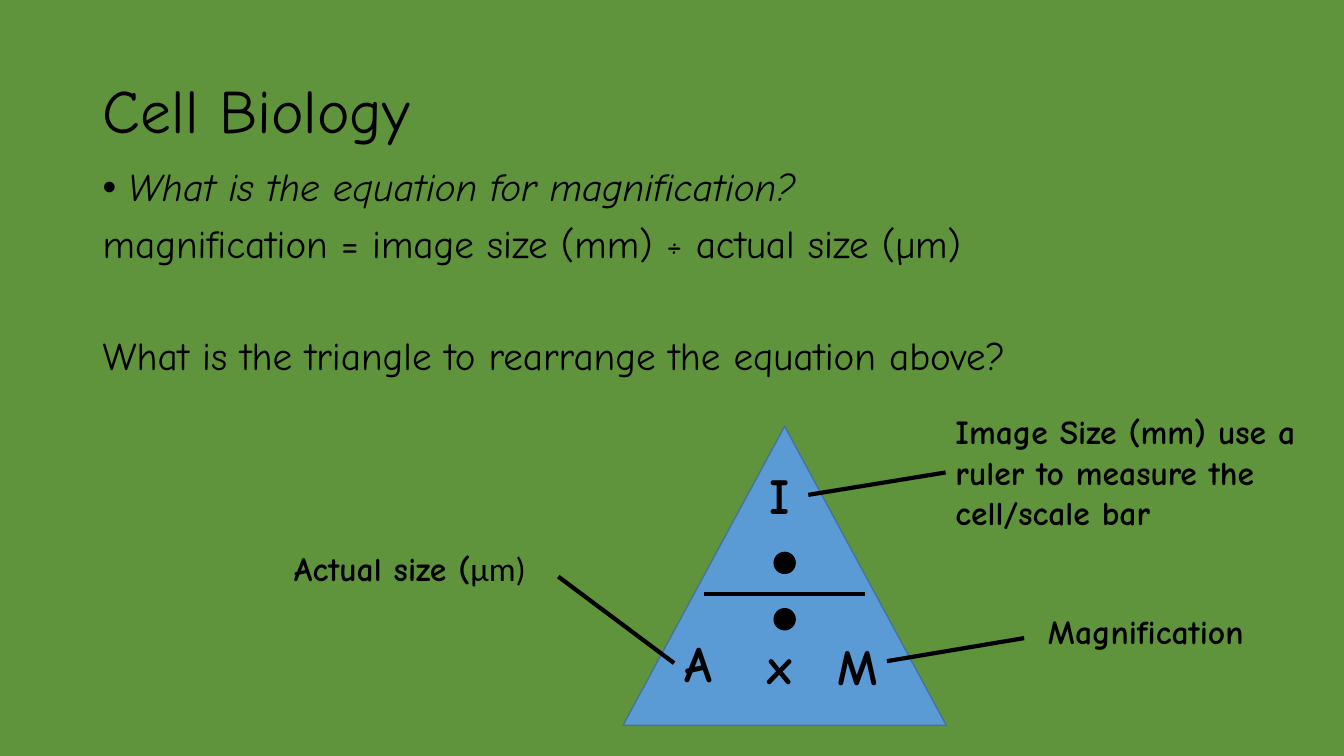
from pptx import Presentation
from pptx.util import Cm, Pt
from pptx.dml.color import RGBColor
from pptx.enum import shapes, text
from pptx.oxml.ns import qn
from lxml import etree

GREEN = RGBColor(0x60, 0x94, 0x3C)
BLUE = RGBColor(0x5B, 0x9B, 0xD5)
EDGE = RGBColor(0x43, 0x73, 0x9E)
BLACK = RGBColor(0, 0, 0)
FONT = "Comic Neue"


def add_text(parent, box, lines, size, bold=False, wrap=True):
    sp = parent.add_textbox(*[Cm(v) for v in box])
    tf = sp.text_frame
    tf.word_wrap = wrap
    tf.text = "\n".join(lines)
    for p in tf.paragraphs:
        p.font.name, p.font.size, p.font.bold = FONT, Pt(size), bold
        p.font.color.rgb = BLACK
    return sp


def add_line(parent, x1, y1, x2, y2):
    cn = parent.add_connector(shapes.MSO_CONNECTOR.STRAIGHT, Cm(x1), Cm(y1), Cm(x2), Cm(y2))
    cn.line.color.rgb = BLACK
    cn.line.width = Pt(3)
    etree.SubElement(cn._element.spPr, qn("a:effectLst"))
    return cn


prs = Presentation()
prs.slide_width, prs.slide_height = Cm(33.87), Cm(19.05)
s = prs.slides.add_slide(prs.slide_layouts[5])
s.background.fill.solid()
s.background.fill.fore_color.rgb = GREEN

# Title
title = s.shapes.title
title.left, title.top, title.width, title.height = Cm(2.34), Cm(1.02), Cm(29.21), Cm(3.68)
tf = title.text_frame
tf.text = "Cell Biology"
tf.auto_size = text.MSO_AUTO_SIZE.NONE
tf.vertical_anchor = text.MSO_ANCHOR.MIDDLE
p = tf.paragraphs[0]
p.alignment = text.PP_ALIGN.LEFT
p.line_spacing = 0.9
p.font.name, p.font.size = FONT, Pt(44)
p.font.color.rgb = BLACK

# Questions and equation
body = add_text(s.shapes, (2.34, 4.11, 29.21, 14.2), [
    "What is the equation for magnification?",
    "magnification = image size (mm) ÷ actual size (µm)",
    "What is the triangle to rearrange the equation above?",
], 28)
for p, gap in zip(body.text_frame.paragraphs, (10, 10, 50)):
    p.line_spacing = 0.9
    p.space_before = Pt(gap)
p = body.text_frame.paragraphs[0]
p.font.italic = True
pPr = p._p.get_or_add_pPr()
pPr.set("marL", str(Cm(0.635)))
pPr.set("indent", str(-Cm(0.635)))
bullet_font = etree.Element(qn("a:buFont"), typeface="Arial")
bullet = etree.Element(qn("a:buChar"), char="•")
pPr.find(qn("a:defRPr")).addprevious(bullet_font)
bullet_font.addnext(bullet)

# Formula triangle with its division sign
group = s.shapes.add_group_shape().shapes
SHAPE = shapes.MSO_SHAPE
for kind, box, fill, edge in [
    (SHAPE.ISOSCELES_TRIANGLE, (15.7, 10.74, 8.15, 7.54), BLUE, EDGE),
    (SHAPE.OVAL, (19.51, 13.92, 0.53, 0.53), BLACK, BLACK),
    (SHAPE.OVAL, (19.51, 15.34, 0.53, 0.53), BLACK, BLACK),
]:
    sp = group.add_shape(kind, *[Cm(v) for v in box])
    sp.shadow.inherit = False
    sp.fill.solid()
    sp.fill.fore_color.rgb = fill
    sp.line.color.rgb = edge
    sp.line.width = Pt(1)
add_line(group, 17.73, 14.96, 21.79, 14.96)

for letter, x, y, w in [("I", 19.15, 11.58, 1.22), ("A", 16.99, 15.8, 1.45),
                        ("M", 20.85, 15.88, 1.65), ("x", 19.1, 15.85, 1.27)]:
    add_text(group, (x, y, w, 1.8), [letter], 36, bold=True, wrap=False)

# Labels and their leader lines
image_label = add_text(s.shapes, (23.83, 10.24, 9.17, 3.33),
                       ["Image Size (mm) use a ruler to measure the cell/scale bar"], 24, bold=True)
add_text(s.shapes, (26.16, 15.27, 7.37, 1.27), ["Magnification"], 24, bold=True)
actual_label = add_text(s.shapes, (7.16, 13.69, 9.17, 1.27), ["Actual size ("], 24, bold=True)
r = actual_label.text_frame.paragraphs[0].add_run()
r.text = "µm)"
r.font.name, r.font.bold = "Calibri", False

add_line(s.shapes, 20.37, 12.47, 23.83, 11.9).end_connect(image_label, 1)
add_line(s.shapes, 22.35, 16.66, 25.81, 16.08)
add_line(s.shapes, 14.07, 14.53, 16.99, 16.71)

prs.save("out.pptx")
